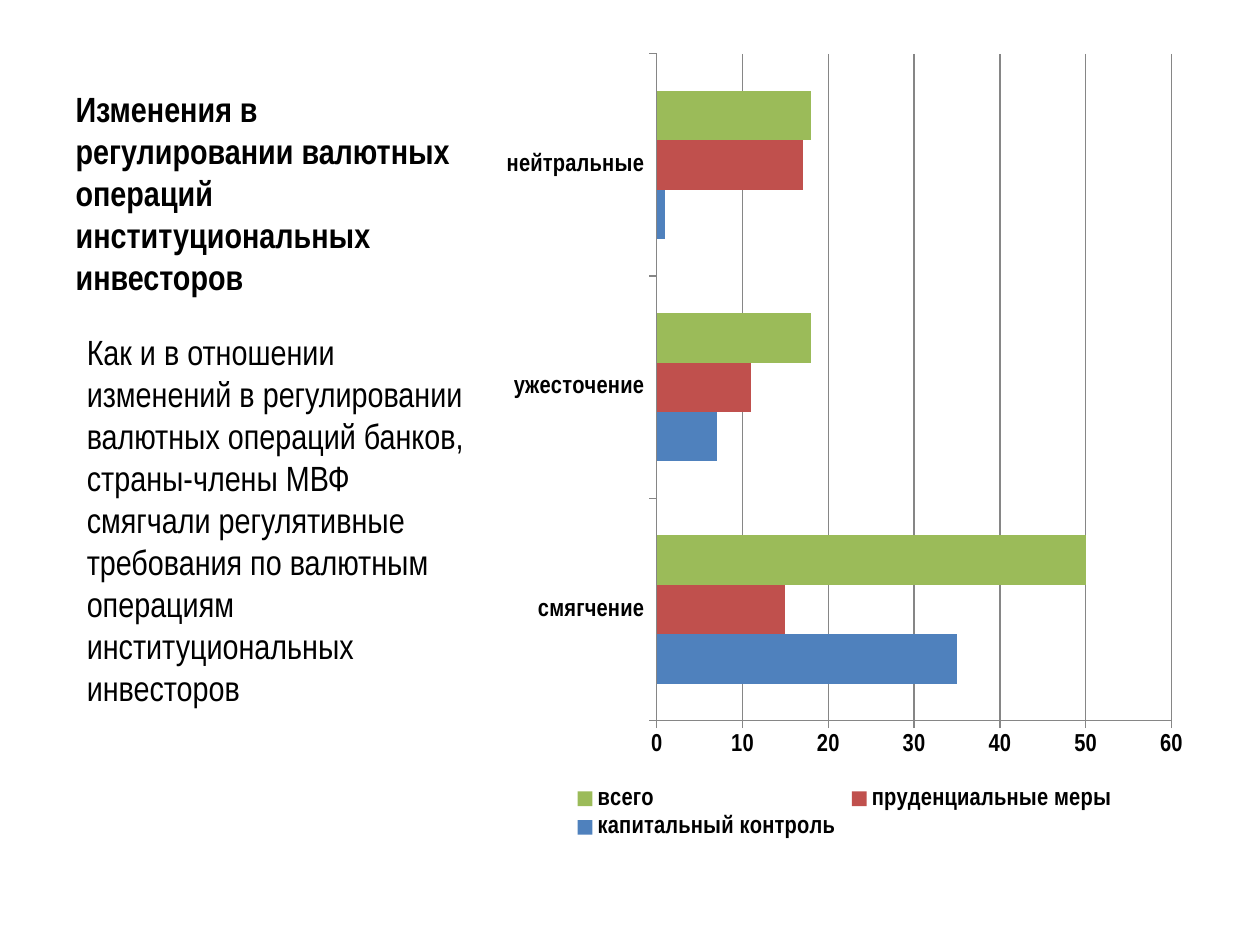
from pptx import Presentation
from pptx.chart.data import CategoryChartData
from pptx.dml.color import RGBColor
from pptx.enum.chart import XL_CHART_TYPE, XL_LEGEND_POSITION, XL_TICK_MARK
from pptx.enum.text import MSO_ANCHOR, MSO_AUTO_SIZE, PP_ALIGN
from pptx.util import Cm, Pt

TITLE = "Изменения в регулировании валютных операций институциональных инвесторов"
BODY = ("Как и в отношении изменений в регулировании валютных операций банков, "
        "страны-члены МВФ смягчали регулятивные требования по валютным операциям "
        "институциональных инвесторов")
CATEGORIES = ["смягчение", "ужесточение", "нейтральные"]
SERIES = [
    ("капитальный контроль", (35, 7, 1), "blue"),
    ("пруденциальные меры", (15, 11, 17), "red"),
    ("всего", (50, 18, 18), "green"),
]
COLORS = {"text": "000000", "axis": "868686",
          "blue": "4F81BD", "red": "C0504D", "green": "9BBB59"}
FONT = "Arial Narrow"
TITLE_BOX = Cm(1.27), Cm(0.76), Cm(8.36), Cm(5.36)
BODY_BOX = Cm(1.5), Cm(6.53), Cm(8.36), Cm(9.88)
CHART_BOX = Cm(9.93), Cm(0.76), Cm(14.2), Cm(16.26)


def rgb(name):
    return RGBColor.from_string(COLORS[name])


def set_font(font, size, bold, name=FONT):
    for key, value in {"name": name, "size": Pt(size), "bold": bold}.items():
        setattr(font, key, value)
    font.color.rgb = rgb("text")


def place(sp, box):
    sp.left, sp.top, sp.width, sp.height = box


def write(sp, text, anchor, bold):
    tf = sp.text_frame
    tf.word_wrap = True
    tf.auto_size = MSO_AUTO_SIZE.NONE
    tf.vertical_anchor = anchor
    p = tf.paragraphs[0]
    p.alignment = PP_ALIGN.LEFT
    r = p.add_run()
    r.text = text
    set_font(r.font, 20, bold)


def add_bar_chart(s):
    data = CategoryChartData()
    data.categories = CATEGORIES
    for name, values, _ in SERIES:
        data.add_series(name, values)
    chart = s.shapes.add_chart(XL_CHART_TYPE.BAR_CLUSTERED, *CHART_BOX, data).chart
    set_font(chart.font, 10, False, "Calibri")
    chart.has_title = False

    plot = chart.plots[0]
    plot.gap_width = 150
    plot.vary_by_categories = False
    for series, (_, _, color) in zip(plot.series, SERIES):
        series.format.fill.solid()
        series.format.fill.fore_color.rgb = rgb(color)

    value_axis = chart.value_axis
    value_axis.has_major_gridlines = True
    for axis in (chart.category_axis, value_axis):
        axis.major_tick_mark = XL_TICK_MARK.OUTSIDE
        set_font(axis.tick_labels.font, 14, True)
    for part in (chart.category_axis, value_axis, value_axis.major_gridlines):
        part.format.line.color.rgb = rgb("axis")
        part.format.line.width = Pt(0.75)

    chart.has_legend = True
    chart.legend.position = XL_LEGEND_POSITION.BOTTOM
    chart.legend.include_in_layout = False
    set_font(chart.legend.font, 14, True)


def main():
    prs = Presentation()
    prs.slide_width, prs.slide_height = Cm(25.4), Cm(19.05)
    s = prs.slides.add_slide(prs.slide_layouts[5])

    title = s.shapes.title
    place(title, TITLE_BOX)
    write(title, TITLE, MSO_ANCHOR.BOTTOM, True)

    body = s.shapes.add_textbox(*BODY_BOX)
    write(body, BODY, MSO_ANCHOR.TOP, False)
    body.text_frame.paragraphs[0].space_before = Pt(4)

    add_bar_chart(s)
    prs.save("out.pptx")


if __name__ == "__main__":
    main()
